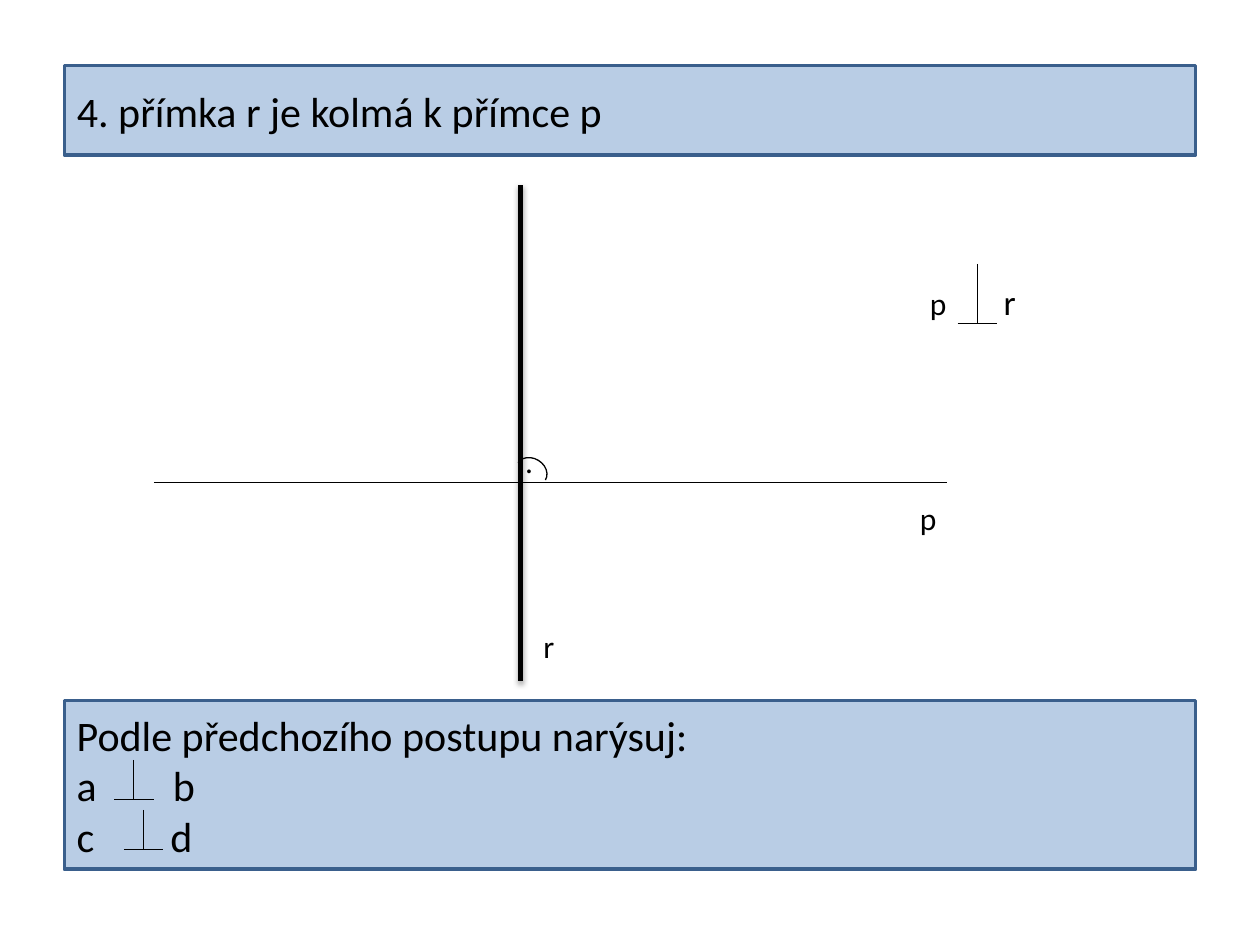
from lxml.etree import SubElement
from pptx import Presentation
from pptx.dml.color import RGBColor
from pptx.enum.shapes import MSO_CONNECTOR, MSO_SHAPE
from pptx.enum.text import MSO_ANCHOR, MSO_AUTO_SIZE, PP_ALIGN
from pptx.oxml import parse_xml
from pptx.oxml.ns import nsdecls, qn
from pptx.util import Pt

COLORS = {"box": "B9CDE5", "border": "3A5F8C", "ink": "000000"}
RGB = {name: RGBColor.from_string(value) for name, value in COLORS.items()}

prs = Presentation()
prs.slide_width, prs.slide_height = Pt(720), Pt(540)
s = prs.slides.add_slide(prs.slide_layouts[5])


def write(tf, lines, size, tabs=()):
    """Fill a text frame; each line may have its own tab stop."""
    tf.text = "\n".join(lines)
    for p in tf.paragraphs:
        p.alignment = PP_ALIGN.LEFT
        p.font.name, p.font.size = "Calibri", Pt(size)
        p.font.color.rgb = RGB["ink"]
    for p, stop in zip(tf.paragraphs, tabs):
        if stop:
            p._p.get_or_add_pPr().insert(0, parse_xml(
                f'<a:tabLst {nsdecls("a")}><a:tab pos="{Pt(stop)}" algn="l"/></a:tabLst>'))


def add_line(x1, y1, x2, y2, width=0.75):
    """Draw a black line without a shadow and return its effect list."""
    line = s.shapes.add_connector(MSO_CONNECTOR.STRAIGHT, Pt(x1), Pt(y1), Pt(x2), Pt(y2))
    line.line.color.rgb = RGB["ink"]
    line.line.width = Pt(width)
    return SubElement(line._element.spPr, qn("a:effectLst"))


# Heading and exercise boxes
title = s.shapes.title
title.left, title.top, title.width, title.height = Pt(36.75), Pt(37.5), Pt(646.5), Pt(51)
exercise = s.shapes.add_shape(MSO_SHAPE.RECTANGLE, Pt(36.75), Pt(400.25), Pt(646.5), Pt(96.5))
exercise.shadow.inherit = False
for box in (title, exercise):
    box.fill.solid()
    box.fill.fore_color.rgb = RGB["box"]
    box.line.color.rgb = RGB["border"]
    box.line.width = Pt(2)
    box.text_frame.vertical_anchor = MSO_ANCHOR.MIDDLE
write(title.text_frame, ["4. přímka r je kolmá k přímce p"], 24)
write(exercise.text_frame, ["Podle předchozího postupu narýsuj:", "a\tb", "c\td"], 24,
      tabs=(None, 55, 53.5))

# Line p and the thick perpendicular r with its soft shadow
add_line(88, 275.75, 541.25, 275.75)
effects = add_line(297.5, 105.75, 297.5, 389, width=2.8)
effects.append(parse_xml(
    f'<a:outerShdw {nsdecls("a")} blurRad="{Pt(3.1)}" dist="{Pt(1.6)}" dir="5400000" '
    f'rotWithShape="0"><a:srgbClr val="{COLORS["ink"]}"><a:alpha val="38000"/>'
    '</a:srgbClr></a:outerShdw>'))

# Right angle mark
arc = s.shapes.add_shape(MSO_SHAPE.ARC, Pt(294.5), Pt(262), Pt(18.5), Pt(15))
arc.shadow.inherit = False
arc.rotation = 31.5
arc.adjustments[0], arc.adjustments[1] = 109.056, 0
arc.fill.background()
arc.line.color.rgb = RGB["ink"]
arc.line.width = Pt(0.75)

# Labels
for text, x, y, w, h in [
    (".", 293, 249, 34, 29),
    ("r", 303.5, 355, 22, 29),
    ("p", 518.5, 281.5, 39.5, 29),
    ("p\tr", 524.25, 157, 124.5, 31.5),
]:
    tf = s.shapes.add_textbox(Pt(x), Pt(y), Pt(w), Pt(h)).text_frame
    tf.word_wrap = True
    tf.auto_size = MSO_AUTO_SIZE.SHAPE_TO_FIT_TEXT
    if "\t" in text:
        write(tf, [""], 18, tabs=(42.25,))
        p = tf.paragraphs[0]
        for part, size in (("p\t", 18), ("r", 20)):
            r = p.add_run()
            r.text = part
            r.font.size = Pt(size)
    else:
        write(tf, [text], 18)

# Perpendicular signs: centre, base and height
for x, base, height in [(558.5, 184.75, 34), (76.5, 457, 22.75), (82, 485.5, 22.75)]:
    add_line(x, base - height, x, base)
    add_line(x - 11.25, base, x + 11.25, base)

prs.save("out.pptx")
